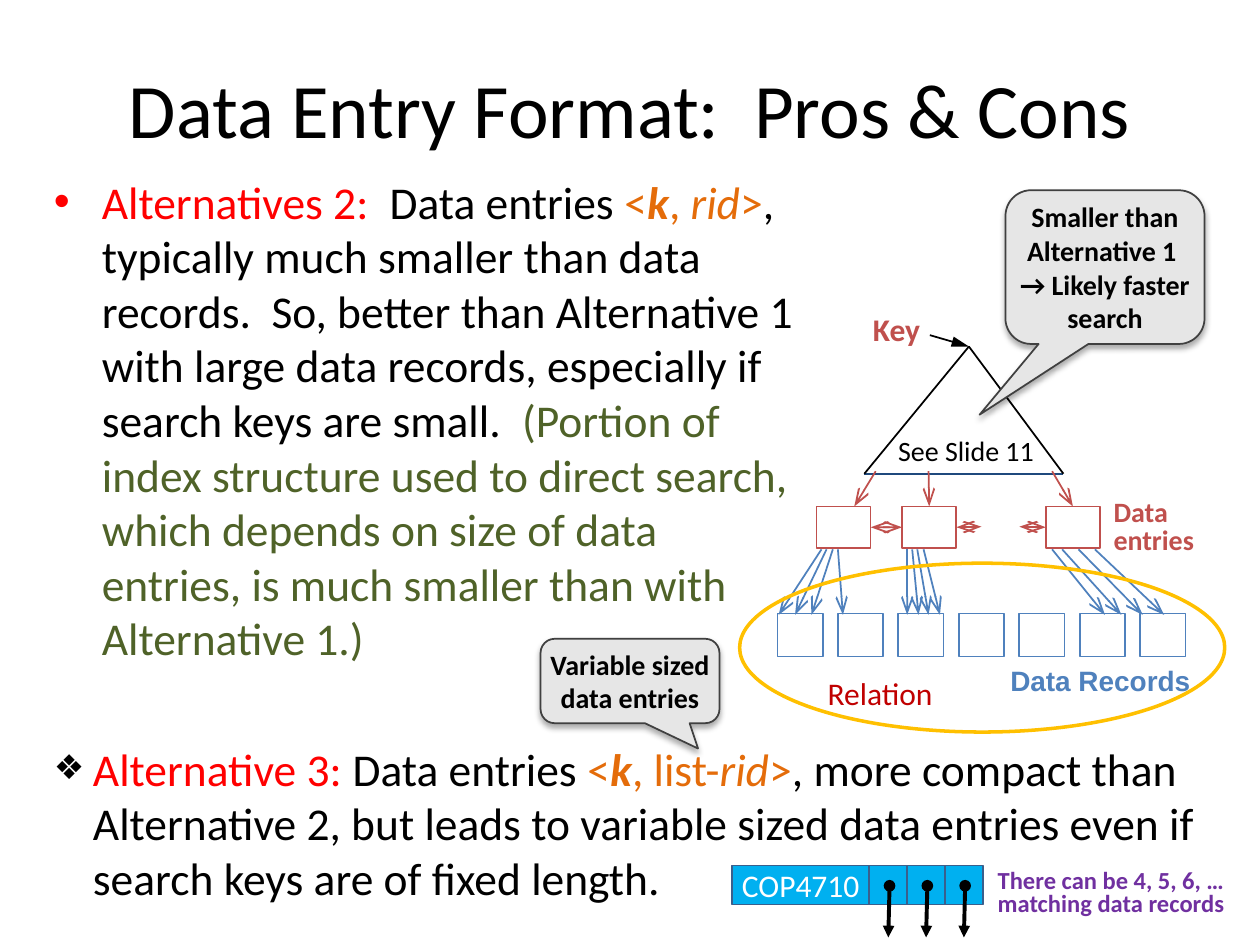
from lxml.etree import SubElement
from pptx import Presentation
from pptx.dml.color import RGBColor
from pptx.enum.shapes import MSO_CONNECTOR, MSO_SHAPE
from pptx.enum.text import MSO_ANCHOR, MSO_AUTO_SIZE, PP_ALIGN
from pptx.oxml.ns import qn
from pptx.util import Inches, Pt

COLOURS = {
    "black": "000000", "white": "FFFFFF", "red": "FF0000", "orange": "E46C0A",
    "green": "4F6228", "blue": "4F81BD", "navy": "1F497D", "brick": "C0504D",
    "dark red": "C00000", "purple": "7030A0", "gold": "FFC000", "cyan": "00B0F0",
    "steel": "3A5F8C", "light grey": "E6E6E6", "dark grey": "404040",
}


def rgb(name):
    return RGBColor.from_string(COLOURS[name])


def add_element(parent, tag, **attributes):
    return SubElement(parent, qn(tag), attributes)


class SlideBuilder:
    """Holds the slide and its style; each method adds one kind of element."""

    def __init__(self, slide, font="Calibri"):
        self.slide = slide
        self.shapes = slide.shapes
        self.font = font

    def fill_frame(self, frame, paragraphs, size, align=PP_ALIGN.LEFT, font=None, leading=None):
        """Each paragraph is a list of (text, colour, style) runs, style using b and i."""
        for index, runs in enumerate(paragraphs):
            paragraph = frame.add_paragraph() if index else frame.paragraphs[0]
            paragraph.alignment = align
            if leading:
                paragraph.line_spacing = Pt(leading)
            for text, colour, style in runs:
                run = paragraph.add_run()
                run.text = text
                run.font.name = font or self.font
                run.font.size = Pt(size)
                run.font.bold = "b" in style
                run.font.italic = "i" in style
                run.font.color.rgb = rgb(colour)

    def title(self, text, box, size):
        title = self.shapes.title
        title.left, title.top, title.width, title.height = map(Inches, box)
        title.text_frame.vertical_anchor = MSO_ANCHOR.MIDDLE
        self.fill_frame(title.text_frame, [[(text, "black", "")]], size, PP_ALIGN.CENTER)

    def text(self, box, paragraphs, size, wrap=False, **style):
        frame = self.shapes.add_textbox(*map(Inches, box)).text_frame
        frame.word_wrap = wrap
        frame.auto_size = MSO_AUTO_SIZE.NONE if wrap else MSO_AUTO_SIZE.SHAPE_TO_FIT_TEXT
        self.fill_frame(frame, paragraphs, size, **style)
        return frame

    def bullet(self, box, runs, size, character, indent, colour=None, percent=100):
        paragraph = self.text(box, [runs], size, wrap=True).paragraphs[0]
        paragraph.space_before = Pt(size * 0.2)
        properties = paragraph._p.get_or_add_pPr()
        properties.set("marL", str(Inches(indent)))
        properties.set("indent", str(-Inches(indent)))
        if colour:
            add_element(add_element(properties, "a:buClr"), "a:srgbClr", val=COLOURS[colour])
        add_element(properties, "a:buSzPct", val=str(percent * 1000))
        add_element(properties, "a:buFont", typeface="Arial")
        add_element(properties, "a:buChar", char=character)

    def shape(self, kind, box, line, fill=None, weight=1):
        shape = self.shapes.add_shape(kind, *map(Inches, box))
        shape.shadow.inherit = False
        shape.line.color.rgb = rgb(line)
        shape.line.width = Pt(weight)
        if fill:
            shape.fill.solid()
            shape.fill.fore_color.rgb = rgb(fill)
        else:
            shape.fill.background()
        return shape

    def label(self, shape, paragraphs, size):
        """Centre text inside a shape."""
        frame = shape.text_frame
        frame.word_wrap = True
        frame.margin_left = frame.margin_right = 0
        frame.vertical_anchor = MSO_ANCHOR.MIDDLE
        self.fill_frame(frame, paragraphs, size, PP_ALIGN.CENTER)

    def callout(self, box, tip, lines):
        shape = self.shape(MSO_SHAPE.ROUNDED_RECTANGULAR_CALLOUT, box, "dark grey", "light grey")
        for index, value in enumerate((*tip, 0.167)):
            shape.adjustments[index] = value
        effects = shape._element.spPr.find(qn("a:effectLst"))
        shadow = add_element(effects, "a:outerShdw", blurRad=str(Pt(3.5)), dist=str(Pt(2.2)),
                             dir="5400000", rotWithShape="0")
        colour = add_element(shadow, "a:srgbClr", val=COLOURS["black"])
        add_element(colour, "a:alpha", val="32000")
        self.label(shape, [[(line, "black", "b")] for line in lines], 16)

    def line(self, start, end, colour, weight=1, head=None, tail=None, length="lg"):
        connector = self.shapes.add_connector(
            MSO_CONNECTOR.STRAIGHT, *map(Inches, (*start, *end)))
        connector.line.color.rgb = rgb(colour)
        connector.line.width = Pt(weight)
        outline = connector.line._get_or_add_ln()
        for tag, kind in (("a:headEnd", head), ("a:tailEnd", tail)):
            if kind:
                add_element(outline, tag, type=kind, w="med", len=length)
        add_element(connector._element.spPr, "a:effectLst")
        return connector


def draw_index(builder):
    """Index triangle, its data entries and the records they point to."""
    for column in range(7):
        builder.shape(MSO_SHAPE.RECTANGLE, (6.17 + 0.48 * column, 4.87, 0.36, 0.34), "blue")

    left, apex, right = (6.86, 3.76), (7.69, 2.75), (8.44, 3.76)
    builder.line(left, right, "navy")
    builder.line(left, apex, "black")
    builder.line(apex, right, "black")
    builder.line((7.38, 2.66), apex, "black", tail="triangle")

    first, second, last = [
        builder.shape(MSO_SHAPE.RECTANGLE, (x, 4.02, 0.43, 0.33), "brick")
        for x in (6.48, 7.16, 8.3)]
    middle = 4.18
    links = [(6.9, 7.16, first, second), (7.58, 7.79, second, None), (8.09, 8.3, None, last)]
    for start, end, source, target in links:
        link = builder.line((start, middle), (end, middle), "brick", head="arrow", tail="arrow")
        if source:
            link.begin_connect(source, 3)
        if target:
            link.end_connect(target, 1)

    builder.line((6.95, 3.74), (6.78, 4.02), "brick", tail="arrow")
    builder.line((7.37, 3.74), (7.37, 4.02), "brick", tail="arrow").end_connect(second, 0)
    builder.line((8.35, 3.74), (8.52, 4.02), "brick", tail="arrow").end_connect(last, 0)

    pointers = [(6.52, 6.18), (6.56, 6.31), (6.61, 6.44), (6.65, 6.69),
                (7.2, 7.2), (7.24, 7.29), (7.28, 7.37), (7.33, 7.46),
                (8.35, 8.77), (8.43, 8.9), (8.56, 9.07), (8.69, 9.24)]
    for entry_x, record_x in pointers:
        builder.line((entry_x, 4.36), (record_x, 4.88), "blue", tail="arrow")


def draw_list_entry(builder):
    """One key followed by its list of record pointers."""
    key = builder.shape(MSO_SHAPE.RECTANGLE, (5.81, 6.87, 1.09, 0.31), "steel", "cyan")
    builder.label(key, [[("COP4710", "white", "")]], 18)
    for index in range(3):
        x = 6.9 + 0.3 * index
        builder.shape(MSO_SHAPE.RECTANGLE, (x, 6.87, 0.3, 0.31), "steel", "cyan")
        builder.line((x + 0.16, 7.03), (x + 0.15, 7.44), "black", 2.25,
                     head="oval", tail="triangle", length="med")


def main():
    presentation = Presentation()
    presentation.slide_width, presentation.slide_height = Inches(10), Inches(7.5)
    builder = SlideBuilder(presentation.slides.add_slide(presentation.slide_layouts[5]))

    builder.callout((4.29, 5.07, 1.42, 0.67), (0.38, 0.8), ["Variable sized data entries"])
    builder.title("Data Entry Format:  Pros & Cons", (0.33, 0.25, 9.34, 1.21), 44)
    builder.bullet((0.33, 1.33, 6.08, 4.17), [
        ("Alternatives 2:  ", "red", ""), ("Data entries ", "black", ""),
        ("<", "orange", ""), ("k", "orange", "bi"), (", ", "orange", ""),
        ("rid", "orange", "i"), (">", "orange", ""),
        (", typically much smaller than data records.  So, better than Alternative 1 "
         "with large data records, especially if search keys are small.  ", "black", ""),
        ("(Portion of index structure used to direct search, which depends on size of "
         "data entries, is much smaller than with Alternative 1.)", "green", ""),
    ], 26, "•", 0.38)

    draw_index(builder)
    builder.text((8.74, 3.92, 0.84, 0.55),
                 [[("Data", "brick", "b")], [("entries", "brick", "b")]], 16, leading=16)
    builder.text((7.92, 5.22, 1.64, 0.37), [[("Data Records", "blue", "b")]], 16, font="Arial")
    builder.text((6.83, 2.41, 0.58, 0.4), [[("Key", "brick", "b")]], 18)

    builder.bullet((0.33, 5.83, 9.33, 1.33), [
        ("Alternative 3: ", "red", ""), ("Data entries ", "black", ""),
        ("<", "orange", ""), ("k", "orange", "bi"), (", list-", "orange", ""),
        ("rid", "orange", "i"), (">", "orange", ""),
        (", more compact than Alternative 2, but leads to variable sized data entries "
         "even if search keys are of fixed length.", "black", ""),
    ], 26, "❖", 0.31, "black", 75)
    builder.callout((7.98, 1.51, 1.58, 1.22), (-0.63, 0.96),
                    ["Smaller than Alternative 1 ", "→ Likely faster search"])

    draw_list_entry(builder)
    builder.shape(MSO_SHAPE.OVAL, (5.87, 4.47, 3.85, 1.34), "gold", weight=2)
    builder.text((6.47, 5.3, 1.05, 0.4), [[("Relation", "dark red", "")]], 18)
    builder.text((7.03, 3.39, 1.29, 0.37), [[("See Slide 11", "black", "")]], 16)
    builder.text((7.82, 6.87, 2.04, 0.47),
                 [[("There can be 4, 5, 6, … matching data records", "purple", "b")]],
                 14, wrap=True, leading=13)
    presentation.save("out.pptx")


if __name__ == "__main__":
    main()
